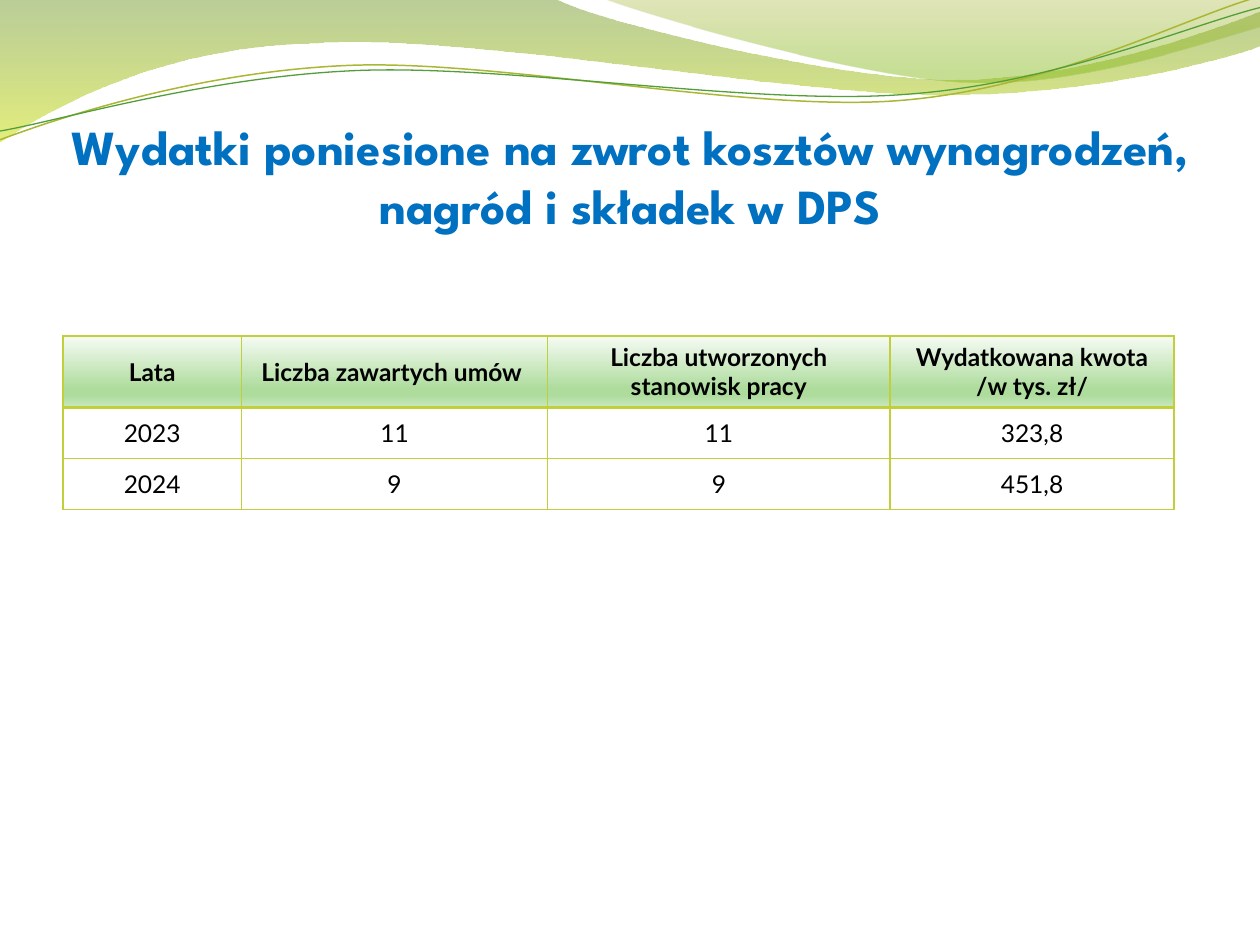
from math import cos, radians, sin

from lxml import etree
from pptx import Presentation
from pptx.dml.color import RGBColor
from pptx.enum import text
from pptx.oxml import parse_xml
from pptx.oxml.ns import nsdecls, qn
from pptx.util import Pt

BLUE = RGBColor(0x00, 0x70, 0xC0)
BLACK = RGBColor(0x00, 0x00, 0x00)
LIME = RGBColor(0xC0, 0xCF, 0x3A)
OLIVE = RGBColor(0xA9, 0xB7, 0x33)
GREEN = RGBColor(0x54, 0x9E, 0x39)
# Gradient stops: position %, colour, opacity %
BAND = [(0, RGBColor(0x69, 0x92, 0x1C), 45), (100, RGBColor(0xCC, 0xE1, 0x0F), 55)]
CORNER = [(0, RGBColor(0x9B, 0xAA, 0x1A), 30), (80, RGBColor(0x81, 0xBA, 0x16), 45)]
HEADER = [(0, RGBColor(0xF6, 0xFB, 0xF4), 100), (74, RGBColor(0xAE, 0xDC, 0x9D), 100),
          (83, RGBColor(0xAE, 0xDC, 0x9D), 100), (100, RGBColor(0xC9, 0xE8, 0xBE), 100)]


def gradient(fill, props, stops):
    """Give a shape or cell a top-to-bottom gradient."""
    fill.background()
    gs = "".join(f'<a:gs pos="{pos * 1000}"><a:srgbClr val="{color}">'
                 f'<a:alpha val="{alpha * 1000}"/></a:srgbClr></a:gs>'
                 for pos, color, alpha in stops)
    props.replace(props.find(qn("a:noFill")), parse_xml(
        f'<a:gradFill {nsdecls("a")}><a:gsLst>{gs}</a:gsLst>'
        '<a:lin ang="5400000" scaled="0"/></a:gradFill>'))


def curve(shapes, start, segments, tilt, close):
    """Freeform from straight (2 numbers) and Bezier (6 numbers) segments.

    Coordinates count 72 points to the unit; a tilted outline is
    levelled first and the shape is then rotated by the tilt.
    """
    flat = [*start, *(v for seg in segments for v in seg)]
    cx, cy = 4.99, 0.58
    c, n = cos(radians(-tilt)), sin(radians(-tilt))
    pts = [(Pt(72 * (cx + (x - cx) * c - (y - cy) * n)),
            Pt(72 * (cy + (x - cx) * n + (y - cy) * c)))
           for x, y in zip(flat[::2], flat[1::2])]
    builder = shapes.build_freeform(*pts[0])
    builder.add_line_segments(pts[1:], close=close)
    sp = builder.convert_to_shape()
    # Turn each run of three Bezier points into one curve
    lines = iter(list(sp._element.iter(qn("a:lnTo"))))
    for seg in segments:
        first = next(lines)
        if len(seg) == 6:
            first.tag = qn("a:cubicBezTo")
            for _ in range(2):
                line = next(lines)
                first.append(line[0])
                line.getparent().remove(line)
    sp.rotation = tilt
    sp.shadow.inherit = False
    return sp


prs = Presentation()
prs.slide_width, prs.slide_height = Pt(720), Pt(540)
s = prs.slides.add_slide(prs.slide_layouts[5])

# Filled waves along the top
fills = [
    ((0, 0), [(4.4, -.01), (4.75, .17, 6.63, .63, 7.58, .63), (8.53, .63, 9.58, .26, 10, .09),
              (10.01, .36), (9.83, .44, 8.69, .76, 7.46, .75), (6.22, .75, 3.81, .28, 2.57, .34),
              (1.29, .36, .46, .83, -.01, 1.13), (0, 0)], BAND),
    ((4.79, -.01), [(5.09, .11, 6.82, .62, 7.68, .65), (8.55, .69, 9.61, .32, 10, .21),
                    (10, 0), (4.79, -.01)], CORNER),
]
for start, segments, stops in fills:
    sp = curve(s.shapes, start, segments, 0, True)
    gradient(sp.fill, sp._element.spPr, stops)
    sp.line.fill.background()

# Thin wave lines
strokes = [
    ((0, 1.11), [(.48, .93, 1.57, .57, 2.76, .52), (3.95, .47, 5.92, .89, 7.12, .8),
                 (8.33, .71, 9.38, .15, 9.97, -.02)], OLIVE, 0.85),
    ((0, 1.04), [(.47, .96, 1.63, .61, 2.83, .56), (4.02, .51, 5.97, .84, 7.17, .75),
                 (8.36, .67, 9.41, .21, 10, .06)], GREEN, 0.75),
]
for start, segments, color, width in strokes:
    sp = curve(s.shapes, start, segments, -2.7, False)
    sp.fill.background()
    sp.line.color.rgb = color
    sp.line.width = Pt(width)

# Title, in front of the waves
title = s.shapes.title
s.shapes._spTree.append(title._element)
title.left, title.top, title.width, title.height = Pt(36), Pt(44), Pt(648), Pt(90)
tf = title.text_frame
tf.word_wrap = True
tf.auto_size = text.MSO_AUTO_SIZE.NONE
tf.vertical_anchor = text.MSO_ANCHOR.BOTTOM
tf.margin_left = tf.margin_right = tf.margin_bottom = 0
tf.margin_top = Pt(3.6)
p = tf.paragraphs[0]
p.alignment = text.PP_ALIGN.CENTER
r = p.add_run()
r.text = "Wydatki poniesione na zwrot kosztów wynagrodzeń, nagród i składek w DPS"
r.font.name, r.font.size, r.font.bold = "League Spartan", Pt(28), True
r.font.color.rgb = BLUE

# Table of spending by year
rows = [
    ["Lata", "Liczba zawartych umów ", "Liczba utworzonych stanowisk pracy",
     "Wydatkowana kwota\n/w tys. zł/"],
    ["2023", "11", "11", "323,8"],
    ["2024", "9", "9", "451,8"],
]
col_widths = [102, 175, 195.6, 162.4]
row_heights = [40.8, 29.2, 29.2]
table = s.shapes.add_table(len(rows), len(col_widths), Pt(36), Pt(192),
                           Pt(sum(col_widths)), Pt(sum(row_heights))).table
for col, width in zip(table.columns, col_widths):
    col.width = Pt(width)
for row, height in zip(table.rows, row_heights):
    row.height = Pt(height)

for i, row in enumerate(rows):
    for j, value in enumerate(row):
        cell = table.cell(i, j)
        cell.vertical_anchor = text.MSO_ANCHOR.MIDDLE
        tf = cell.text_frame
        for n, line in enumerate(value.split("\n")):
            p = tf.add_paragraph() if n else tf.paragraphs[0]
            p.alignment = text.PP_ALIGN.CENTER
            r = p.add_run()
            r.text = line
            r.font.name, r.font.size, r.font.bold = "Lato", Pt(14), i == 0
            r.font.color.rgb = BLACK

        # Borders, with a double-weight rule under the header
        tc_pr = cell._tc.get_or_add_tcPr()
        for side in "LRTB":
            heavy = (i, side) in ((0, "B"), (1, "T"))
            ln = etree.SubElement(tc_pr, qn(f"a:ln{side}"), w=str(Pt(2 if heavy else 1)))
            solid = etree.SubElement(ln, qn("a:solidFill"))
            etree.SubElement(solid, qn("a:srgbClr"), val=str(LIME))
        if i == 0:
            gradient(cell.fill, tc_pr, HEADER)
        else:
            cell.fill.background()

prs.save("out.pptx")
